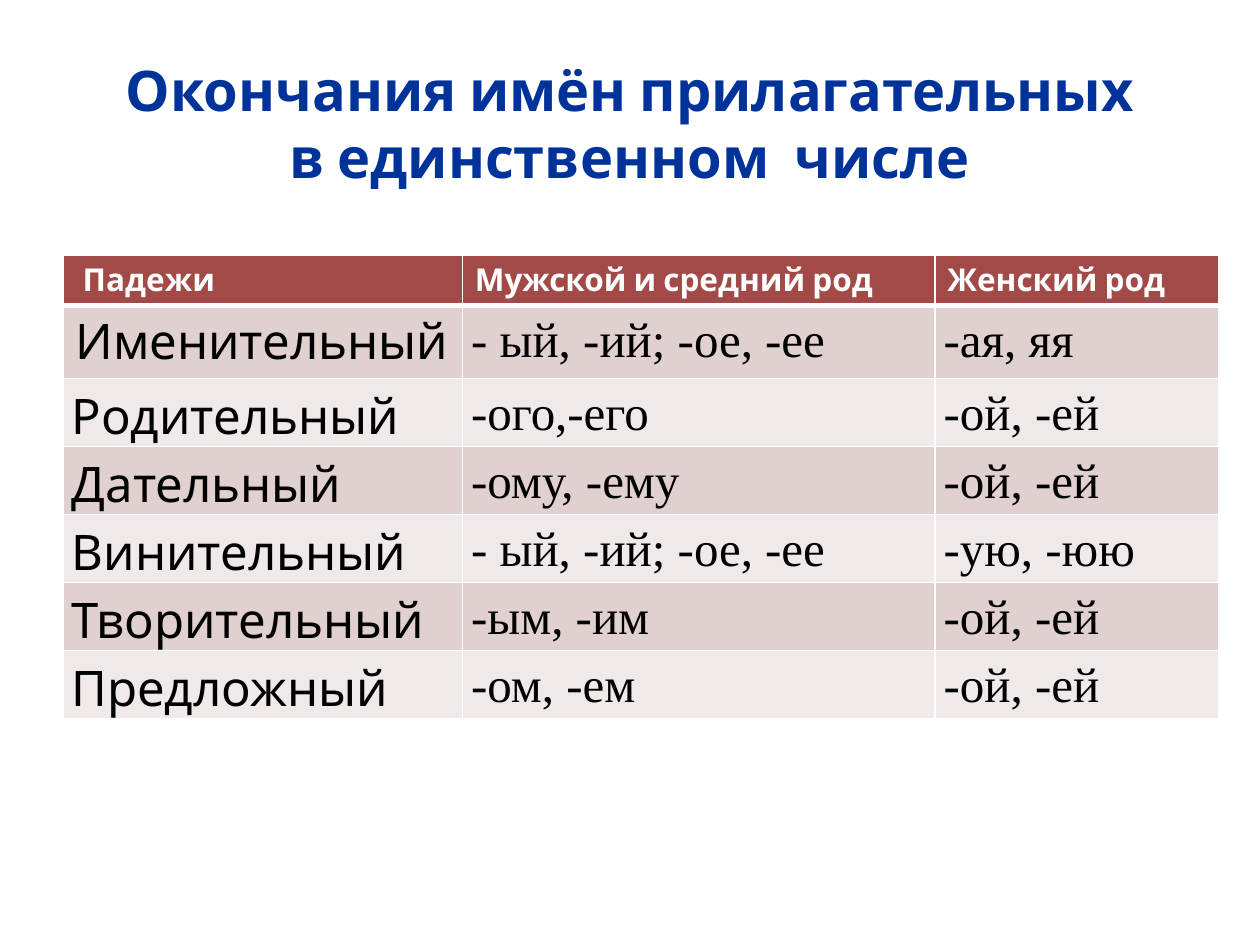
from lxml import etree
from pptx import Presentation
from pptx.dml.color import RGBColor
from pptx.enum.text import MSO_ANCHOR, PP_ALIGN
from pptx.oxml.ns import qn
from pptx.util import Inches, Pt

MIDDLE = MSO_ANCHOR.MIDDLE
CENTER, LEFT, JUST = PP_ALIGN.CENTER, PP_ALIGN.LEFT, PP_ALIGN.JUSTIFY
WIDE, HIGH = 10, 7.5
SANS, SERIF = "Cabin", "Times New Roman"
BLUE, WHITE, BLACK = "00339A", "FFFFFF", "000000"
RED, DARK, PALE = "A24A48", "E0D0CF", "F0E9E9"

TITLE = ["Окончания имён прилагательных", "в единственном  числе"]
HEAD = [" Падежи", "Мужской и средний род", "Женский род"]
CASES = [
    ["Именительный", "- ый, -ий; -ое, -ее", "-ая, яя"],
    ["Родительный", "-ого,-его", "-ой, -ей"],
    ["Дательный", "-ому, -ему", "-ой, -ей"],
    ["Винительный", "- ый, -ий; -ое, -ее", "-ую, -юю"],
    ["Творительный", "-ым, -им", "-ой, -ей"],
    ["Предложный", "-ом, -ем", "-ой, -ей"],
]


def color(code):
    return RGBColor.from_string(code)


class Deck:
    """Holds the style and the current slide."""

    def __init__(self):
        self.show = Presentation()
        self.show.slide_width = Inches(WIDE)
        self.show.slide_height = Inches(HIGH)
        self.slide = self.show.slides.add_slide(self.show.slide_layouts[6])

    def place(self, left, top, width, height):
        """Turn shares of the slide into lengths."""
        return (Inches(left * WIDE), Inches(top * HIGH),
                Inches(width * WIDE), Inches(height * HIGH))

    def font(self, para, face, size, code, bold=False):
        para.font.name, para.font.size = face, Pt(size)
        para.font.bold = bold
        para.font.color.rgb = color(code)

    def title(self, lines, box):
        frame = self.slide.shapes.add_textbox(*self.place(*box)).text_frame
        frame.word_wrap = True
        frame.vertical_anchor = MIDDLE
        para = frame.paragraphs[0]
        para.text = "\v".join(lines)
        para.alignment = CENTER
        self.font(para, SANS, 32, BLUE, True)

    def border(self, cell, low):
        """Draw white lines round a cell, the bottom one low points wide."""
        props = cell._tc.get_or_add_tcPr()
        for tag, size in (("lnL", 1), ("lnR", 1), ("lnT", 1), ("lnB", low)):
            line = etree.SubElement(props, qn("a:" + tag), w=str(Pt(size)))
            fill = etree.SubElement(line, qn("a:solidFill"))
            etree.SubElement(fill, qn("a:srgbClr"), val=WHITE)

    def cell(self, cell, text, fill, low=1):
        self.border(cell, low)
        cell.fill.solid()
        cell.fill.fore_color.rgb = color(fill)
        para = cell.text_frame.paragraphs[0]
        para.text = text
        para.alignment = LEFT
        return para

    def table(self, head, rows, box, widths, heights):
        grid = self.slide.shapes.add_table(
            len(rows) + 1, len(head), *self.place(*box)).table
        for col, width in zip(grid.columns, widths):
            col.width = Inches(width)
        for row, height in zip(grid.rows, heights):
            row.height = Inches(height)

        # Header row
        for c, text in enumerate(head):
            para = self.cell(grid.cell(0, c), text, RED, 3)
            self.font(para, SANS, 18, WHITE, True)

        # Body rows in two shades; the first case keeps default margins
        for r, row in enumerate(rows, 1):
            for c, text in enumerate(row):
                cell = grid.cell(r, c)
                para = self.cell(cell, text, DARK if r % 2 else PALE)
                self.font(para, SERIF if c else SANS, 28, BLACK)
                if (r, c) != (1, 0):
                    cell.margin_left = cell.margin_right = Inches(0.07)
                    cell.margin_top = cell.margin_bottom = 0
                    para.alignment = JUST
                    para.line_spacing = 1.15


def main():
    deck = Deck()
    deck.title(TITLE, (0.05, 0.05, 0.9, 0.16))
    deck.table(HEAD, CASES, (0.05, 0.27, 0.92, 0.49),
               [3.17, 3.75, 2.25], [0.4, 0.58] + [0.54] * 5)
    deck.show.save("out.pptx")


if __name__ == "__main__":
    main()
